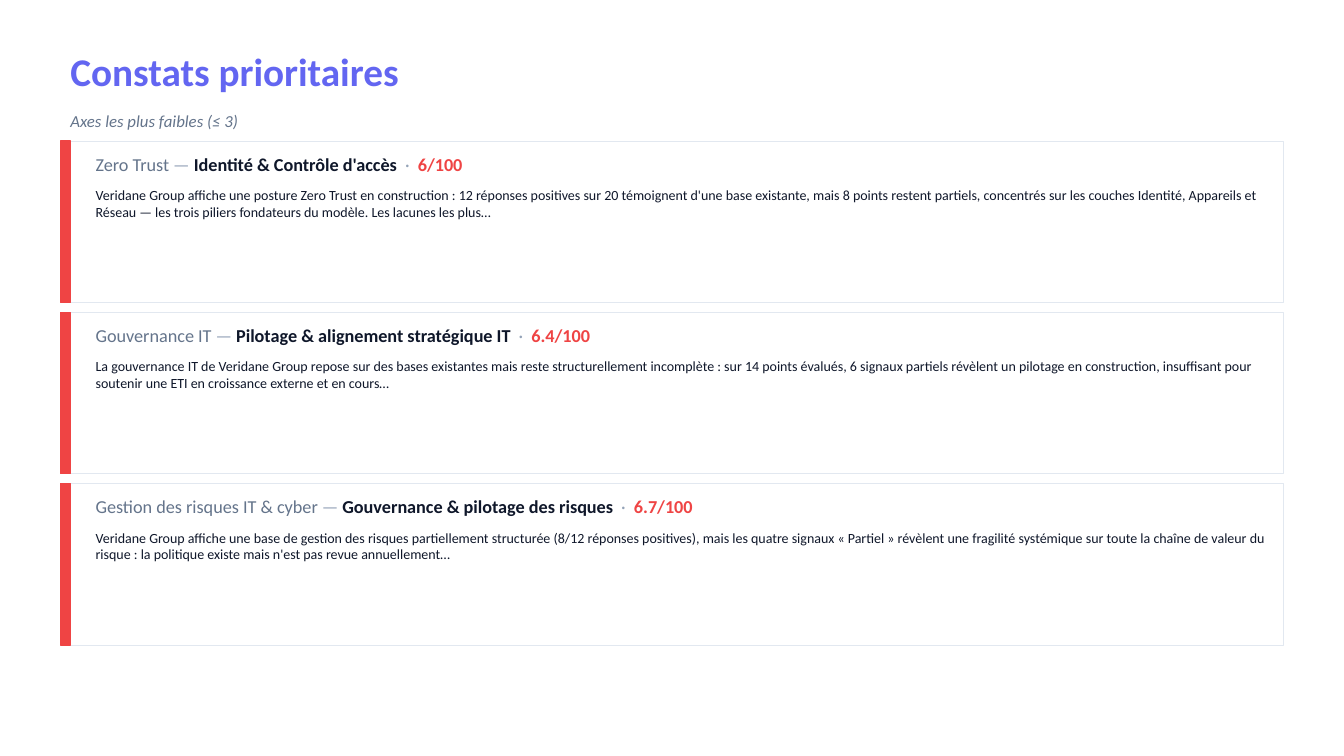
import pptx
import pptx.util
import pptx.dml.color
import pptx.enum.shapes
import pptx.enum.text

Inches = pptx.util.Inches
Color = pptx.dml.color.RGBColor.from_string
Anchor = pptx.enum.text.MSO_ANCHOR

THEME = {
    "font": "Calibri",
    "accent": "6366F1", "muted": "64748B", "separator": "94A3B8",
    "ink": "0F172A", "alert": "EF4444", "border": "E2E8F0", "card": "FFFFFF",
    "title_size": 28, "subtitle_size": 12, "heading_size": 13, "body_size": 10,
}

# Grid, in inches
LEFT, CARDS_TOP = 0.6, 1.4
HEADER_WIDTH, CARD_WIDTH, CARD_HEIGHT, CARD_GAP = 12, 12.13, 1.6, 0.1
BAR_WIDTH, TEXT_INDENT, TEXT_WIDTH = 0.1, 0.25, 11.85
HEADING_OFFSET, HEADING_HEIGHT, BODY_OFFSET = 0.05, 0.35, 0.4

FINDINGS = [
    ("Zero Trust", "Identité & Contrôle d'accès", "6/100",
     "Veridane Group affiche une posture Zero Trust en construction : 12 réponses positives "
     "sur 20 témoignent d'une base existante, mais 8 points restent partiels, concentrés sur "
     "les couches Identité, Appareils et Réseau — les trois piliers fondateurs du modèle. "
     "Les lacunes les plus…"),
    ("Gouvernance IT", "Pilotage & alignement stratégique IT", "6.4/100",
     "La gouvernance IT de Veridane Group repose sur des bases existantes mais reste "
     "structurellement incomplète : sur 14 points évalués, 6 signaux partiels révèlent un "
     "pilotage en construction, insuffisant pour soutenir une ETI en croissance externe et "
     "en cours…"),
    ("Gestion des risques IT & cyber", "Gouvernance & pilotage des risques", "6.7/100",
     "Veridane Group affiche une base de gestion des risques partiellement structurée "
     "(8/12 réponses positives), mais les quatre signaux « Partiel » révèlent une fragilité "
     "systémique sur toute la chaîne de valeur du risque : la politique existe mais n'est pas "
     "revue annuellement…"),
]

presentation = pptx.Presentation()
presentation.slide_width = Inches(13.33)
presentation.slide_height = Inches(7.5)
slide = presentation.slides.add_slide(presentation.slide_layouts[6])


def add_text(left, top, width, height, size, runs, anchor=Anchor.MIDDLE):
    """Add a wrapped text box; runs are (text, colour, bold, italic)."""
    box = slide.shapes.add_textbox(Inches(left), Inches(top), Inches(width), Inches(height))
    box.text_frame.word_wrap = True
    box.text_frame.vertical_anchor = anchor
    paragraph = box.text_frame.paragraphs[0]
    for text, color, bold, italic in runs:
        run = paragraph.add_run()
        run.text = text
        run.font.name = THEME["font"]
        run.font.size = pptx.util.Pt(size)
        run.font.color.rgb = Color(THEME[color])
        run.font.bold = bold
        run.font.italic = italic


def add_rectangle(top, width, fill, line, line_width):
    shape = slide.shapes.add_shape(
        pptx.enum.shapes.MSO_SHAPE.RECTANGLE,
        Inches(LEFT), Inches(top), Inches(width), Inches(CARD_HEIGHT))
    shape.shadow.inherit = False
    shape.fill.solid()
    shape.fill.fore_color.rgb = Color(THEME[fill])
    shape.line.color.rgb = Color(THEME[line])
    shape.line.width = pptx.util.Pt(line_width)


# Header
add_text(LEFT, 0.4, HEADER_WIDTH, 0.6, THEME["title_size"],
         [("Constats prioritaires", "accent", True, False)])
add_text(LEFT, 1, HEADER_WIDTH, 0.4, THEME["subtitle_size"],
         [("Axes les plus faibles (≤ 3)", "muted", False, True)])

# One card per finding
for index, (domain, axis, score, summary) in enumerate(FINDINGS):
    top = CARDS_TOP + index * (CARD_HEIGHT + CARD_GAP)
    add_rectangle(top, CARD_WIDTH, "card", "border", 0.5)
    add_rectangle(top, BAR_WIDTH, "alert", "alert", 1)
    add_text(LEFT + TEXT_INDENT, top + HEADING_OFFSET, TEXT_WIDTH, HEADING_HEIGHT,
             THEME["heading_size"],
             [(domain, "muted", False, False),
              (" — ", "separator", False, False),
              (axis, "ink", True, False),
              ("  ·  ", "separator", False, False),
              (score, "alert", True, False)])
    add_text(LEFT + TEXT_INDENT, top + BODY_OFFSET, TEXT_WIDTH, CARD_HEIGHT - BODY_OFFSET,
             THEME["body_size"], [(summary, "ink", False, False)], Anchor.TOP)

presentation.save("out.pptx")
